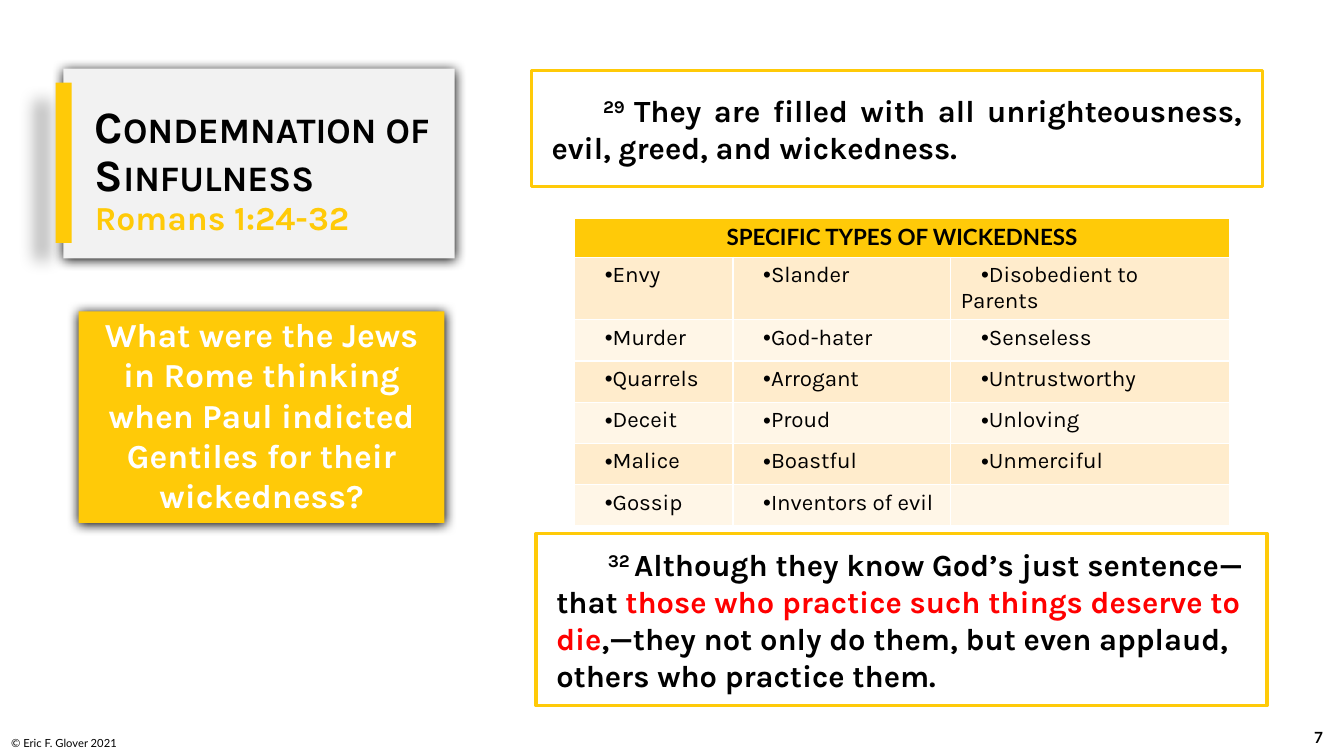
import copy

from lxml import etree
from pptx import Presentation, util as u
from pptx.dml.color import RGBColor
from pptx.enum import shapes, text
from pptx.oxml.ns import qn

GOLD, BLACK, WHITE, RED = "FFCA08", "000000", "FFFFFF", "FF0000"
LEFT, CENTER, JUSTIFY = text.PP_ALIGN.LEFT, text.PP_ALIGN.CENTER, text.PP_ALIGN.JUSTIFY
CARD_SHADOW = (100, 8.5, 1, 90)
ACCENT_SHADOW = (28, 11.8, 19.7, 141)
VERSE_INDENT, BULLET_INDENT = 1.3, 0.51


def rgb(hex_code):
    return RGBColor.from_string(hex_code)


def cm_box(box):
    return [u.Cm(length) for length in box]


def apply(target, **values):
    for name, value in values.items():
        setattr(target, name, value)


class WickednessSlide:
    def __init__(self, deck):
        self.slide = deck.slides.add_slide(deck.slide_layouts[5])
        self.heading_font, self.label_font = "Karla", "Lato"

    def run(self, paragraph, words, size, color=BLACK, bold=True, font=None, **attributes):
        """Add a run; extra attributes such as cap or baseline go on its properties."""
        run = paragraph.add_run()
        run.text = words
        apply(run.font, name=font or self.heading_font, size=u.Pt(size), bold=bold)
        run.font.color.rgb = rgb(color)
        for name, value in attributes.items():
            run.font._rPr.set(name, value)
        return run

    def frame(self, shape, margins=None, anchor=text.MSO_ANCHOR.MIDDLE):
        """Prepare a text frame and return its first paragraph."""
        body = shape.text_frame
        apply(body, word_wrap=True, auto_size=text.MSO_AUTO_SIZE.NONE, vertical_anchor=anchor)
        if margins:
            sides = ("margin_left", "margin_top", "margin_right", "margin_bottom")
            apply(body, **dict(zip(sides, cm_box(margins))))
        return body.paragraphs[0]

    def first_line(self, paragraph, indent, bullet=None):
        """Indent the first line, with a bullet if one is given."""
        properties = paragraph._p.get_or_add_pPr()
        properties.set("marL", "0")
        properties.set("indent", str(u.Cm(indent)))
        if bullet:
            etree.SubElement(properties, qn("a:buFont"), typeface="Arial")
            etree.SubElement(properties, qn("a:buChar"), char=bullet)

    def panel(self, box, fill, outline=None, shadow=None):
        panel = self.slide.shapes.add_shape(shapes.MSO_SHAPE.RECTANGLE, *cm_box(box))
        panel.shadow.inherit = False
        panel.fill.solid()
        panel.fill.fore_color.rgb = rgb(fill)
        if outline:
            panel.line.color.rgb = rgb(outline)
            panel.line.width = u.Pt(2.25)
        else:
            panel.line.fill.background()
        if shadow:
            alpha, blur, distance, angle = shadow
            effects = panel._element.spPr.find(qn("a:effectLst"))
            outer = etree.SubElement(
                effects, qn("a:outerShdw"), blurRad=str(u.Pt(blur)), dist=str(u.Pt(distance)),
                dir=str(angle * 60000), algn="ctr", rotWithShape="0")
            shade = etree.SubElement(outer, qn("a:srgbClr"), val=BLACK)
            etree.SubElement(shade, qn("a:alpha"), val=str(alpha * 1000))
        return panel

    def title(self, box, heading, reference):
        title = self.slide.shapes.title
        apply(title, **dict(zip(("left", "top", "width", "height"), cm_box(box))))
        title._element.getparent().append(title._element)  # bring in front of the card
        paragraph = self.frame(title, (0, 0, 0, 0))
        apply(paragraph, alignment=LEFT, line_spacing=0.9)
        first = self.run(paragraph, heading, 32, cap="small")
        paragraph.add_line_break()
        paragraph._p[-1].append(copy.deepcopy(first.font._rPr))
        self.run(paragraph, reference, 24, GOLD)

    def verse(self, box, number, parts, alignment):
        paragraph = self.frame(self.panel(box, WHITE, outline=GOLD), (0.51, 0, 0.51, 0))
        paragraph.alignment = alignment
        self.first_line(paragraph, VERSE_INDENT)
        self.run(paragraph, number + " ", 22, baseline="30000")
        for words, color in parts:
            self.run(paragraph, words, 22, color)

    def question(self, box, words):
        panel = self.panel(box, GOLD, shadow=CARD_SHADOW)
        paragraph = self.frame(panel, (0.51, 0, 0.51, 0.13))
        apply(paragraph, alignment=CENTER, space_before=u.Pt(6), space_after=u.Pt(6))
        self.run(paragraph, words, 24, WHITE)

    def label(self, box, words, size, bold, anchor, **formats):
        label = self.slide.shapes.add_textbox(*cm_box(box))
        paragraph = self.frame(label, anchor=anchor)
        apply(paragraph, **formats)
        self.run(paragraph, words, size, bold=bold, font=self.label_font)

    def table(self, left, top, widths, heights, heading, rows):
        box = cm_box((left, top, sum(widths), sum(heights)))
        table = self.slide.shapes.add_table(len(heights), len(widths), *box).table
        for column, width in zip(table.columns, widths):
            column.width = u.Cm(width)
        for row, height in zip(table.rows, heights):
            row.height = u.Cm(height)
        header = table.cell(0, 0)
        header.merge(table.cell(0, len(widths) - 1))
        header.fill.solid()
        header.fill.fore_color.rgb = rgb(GOLD)
        paragraph = header.text_frame.paragraphs[0]
        paragraph.alignment = CENTER
        self.run(paragraph, heading, 16, font=self.label_font)
        for r, sins in enumerate(rows, start=1):
            for c, sin in enumerate(sins):
                cell = table.cell(r, c)
                cell.fill.solid()
                cell.fill.fore_color.rgb = rgb("FFECCC" if r % 2 else "FFF6E7")
                if sin:
                    paragraph = cell.text_frame.paragraphs[0]
                    self.first_line(paragraph, BULLET_INDENT, "•")
                    self.run(paragraph, sin, 16, bold=False)


def main():
    deck = Presentation()
    apply(deck, slide_width=u.Cm(33.87), slide_height=u.Cm(19.05))
    page = WickednessSlide(deck)

    page.label((32.61, 18.06, 1.24, 1.02), "7", 11, True, text.MSO_ANCHOR.MIDDLE,
               alignment=CENTER, space_after=u.Pt(6))
    page.label((0.03, 18.31, 3.99, 0.71), "© Eric F. Glover 2021", 8, False,
               text.MSO_ANCHOR.BOTTOM)
    page.panel((1.6, 1.73, 9.86, 4.78), "F2F2F2", shadow=CARD_SHADOW)
    page.panel((1.4, 2.08, 0.41, 4.04), GOLD, shadow=ACCENT_SHADOW)
    page.title((2.39, 1.93, 8.89, 4.75), "Condemnation of Sinfulness", "Romans 1:24-32")

    page.verse((13.39, 1.78, 18.42, 2.92), "29", [
        ("They are filled with all unrighteousness, evil, greed, and wickedness.", BLACK),
    ], JUSTIFY)
    page.table(14.48, 5.51, (3.99, 5.49, 7.03), [0.97] + [1.04] * 6,
               "SPECIFIC TYPES OF WICKEDNESS", [
                   ("Envy", "Slander", "Disobedient to Parents"),
                   ("Murder", "God-hater", "Senseless"),
                   ("Quarrels", "Arrogant", "Untrustworthy"),
                   ("Deceit", "Proud", "Unloving"),
                   ("Malice", "Boastful", "Unmerciful"),
                   ("Gossip", "Inventors of evil", ""),
               ])
    page.question((1.98, 7.85, 9.22, 5.33), "What were the Jews in Rome thinking when Paul "
                  "indicted Gentiles for their wickedness?")
    page.verse((13.51, 13.44, 18.42, 4.34), "32", [
        ("Although they know God’s just sentence—that ", BLACK),
        ("those who practice such things deserve to die", RED),
        (",—they not only do them, but even applaud, others who practice them.", BLACK),
    ], LEFT)
    deck.save("out.pptx")


if __name__ == "__main__":
    main()
